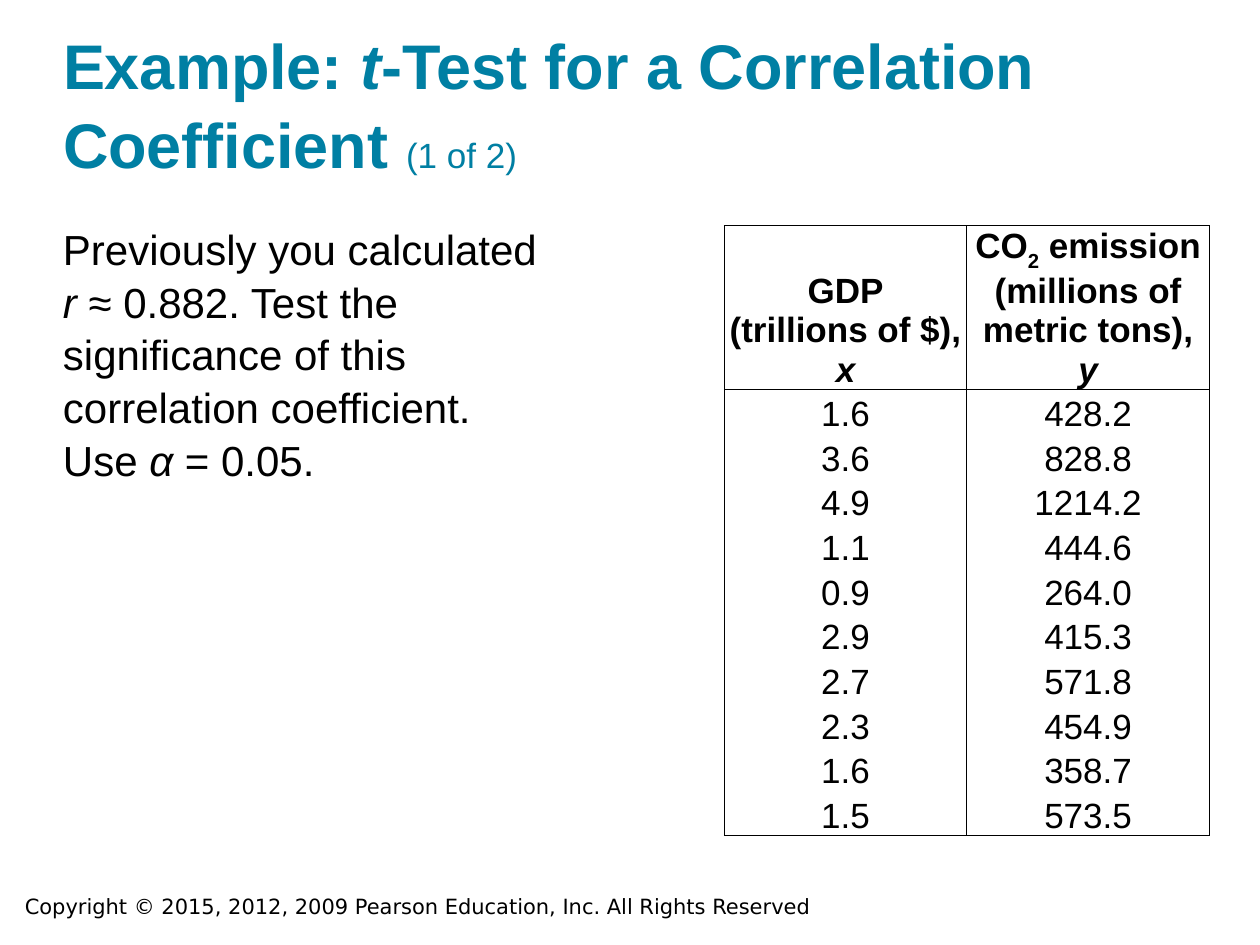
"""Build the slide on a t-test for a correlation coefficient."""
from typing import NamedTuple

from pptx import Presentation
from pptx.dml.color import RGBColor
from pptx.enum.text import MSO_ANCHOR, MSO_AUTO_SIZE, PP_ALIGN
from pptx.oxml import parse_xml
from pptx.oxml.ns import nsdecls
from pptx.util import Cm, Pt

TEAL = RGBColor(0x00, 0x7F, 0xA3)
BLACK = RGBColor(0, 0, 0)
WHITE = RGBColor(0xFF, 0xFF, 0xFF)


class Style(NamedTuple):
    size: float
    color: RGBColor = BLACK
    bold: bool = False
    face: str = "Arial"


class Part(NamedTuple):
    text: str
    slant: bool = False
    sub: bool = False
    style: Style | None = None


class Box(NamedTuple):
    left: float
    top: float
    width: float
    height: float

    def lengths(self) -> list[Cm]:
        return [Cm(side) for side in self]


TITLE = Style(36, TEAL, True)
COUNT = Style(20, TEAL)
BODY = Style(24)
HEAD = Style(20, bold=True)
DATA = Style(20)
NOTE = Style(12, face="DejaVu Sans")

HEADS = [
    [[Part("GDP")], [Part("(trillions of $), "), Part("x", slant=True)]],
    [[Part("CO"), Part("2", sub=True),
      Part(" emission (millions of metric tons), "), Part("y", slant=True)]],
]
PAIRS = [
    ("1.6", "428.2"), ("3.6", "828.8"), ("4.9", "1214.2"), ("1.1", "444.6"),
    ("0.9", "264.0"), ("2.9", "415.3"), ("2.7", "571.8"), ("2.3", "454.9"),
    ("1.6", "358.7"), ("1.5", "573.5"),
]


def write(para, parts: list[Part], base: Style) -> None:
    for part in parts:
        style = part.style or base
        run = para.add_run()
        run.text = part.text
        font = run.font
        font.name, font.size = style.face, Pt(style.size)
        font.bold, font.italic = style.bold, part.slant
        font.color.rgb = style.color
        if part.sub:
            run._r.get_or_add_rPr().set("baseline", "-26000")


def set_frame(frame, inset: float, anchor: MSO_ANCHOR) -> None:
    frame.word_wrap = True
    frame.auto_size = MSO_AUTO_SIZE.NONE
    frame.vertical_anchor = anchor
    frame.margin_left = frame.margin_right = Cm(inset)
    frame.margin_top = frame.margin_bottom = Cm(inset)


def add_text(slide, box: Box, parts: list[Part], style: Style):
    frame = slide.shapes.add_textbox(*box.lengths()).text_frame
    write(frame.paragraphs[0], parts, style)
    return frame


def add_edges(cell, shown: str) -> None:
    props = cell._tc.get_or_add_tcPr()
    for spot, side in enumerate("LRTB"):
        fill = ('<a:solidFill><a:srgbClr val="000000"/></a:solidFill>'
                if side in shown else "<a:noFill/>")
        props.insert(spot, parse_xml(
            f'<a:ln{side} {nsdecls("a")} w="6350">{fill}</a:ln{side}>'))


def fill_cell(cell, lines: list[list[Part]], style: Style, edges: str) -> None:
    cell.margin_left = cell.margin_right = cell.margin_top = Cm(0.03)
    cell.margin_bottom = 0
    cell.vertical_anchor = MSO_ANCHOR.BOTTOM
    frame = cell.text_frame
    for spot, parts in enumerate(lines):
        para = frame.add_paragraph() if spot else frame.paragraphs[0]
        para.alignment = PP_ALIGN.CENTER
        write(para, parts, style)
    add_edges(cell, edges)


def add_data(slide, box: Box) -> None:
    table = slide.shapes.add_table(len(PAIRS) + 1, 2, *box.lengths()).table
    table.first_row = table.horz_banding = False
    for row in table.rows:
        row.height = Cm(0.9)
    table.rows[0].height = Cm(3.1)
    for col, lines in enumerate(HEADS):
        cell = table.cell(0, col)
        cell.fill.solid()
        cell.fill.fore_color.rgb = WHITE
        fill_cell(cell, lines, HEAD, "LRTB")
    for row, pair in enumerate(PAIRS, 1):
        edges = "LR" + "T" * (row == 1) + "B" * (row == len(PAIRS))
        for col, value in enumerate(pair):
            cell = table.cell(row, col)
            cell.fill.background()
            fill_cell(cell, [[Part(value)]], DATA, edges)


def main() -> None:
    deck = Presentation()
    deck.slide_width, deck.slide_height = Cm(25.4), Cm(19.05)
    slide = deck.slides.add_slide(deck.slide_layouts[5])

    title = slide.shapes.title
    title.left, title.top, title.width, title.height = Box(
        1.27, 0.61, 22.86, 3.05).lengths()
    set_frame(title.text_frame, 0, MSO_ANCHOR.BOTTOM)
    head = title.text_frame.paragraphs[0]
    head.alignment = PP_ALIGN.LEFT
    head.line_spacing = 1.05
    write(head, [
        Part("Example: "), Part("t", slant=True),
        Part("-Test for a Correlation Coefficient "),
        Part("(1 of 2)", style=COUNT),
    ], TITLE)

    body = add_text(slide, Box(1.27, 4.45, 9.96, 5.72), [
        Part("Previously you calculated "), Part("r", slant=True),
        Part(" ≈ 0.882. Test the significance of this correlation "
             "coefficient. Use "),
        Part("α", slant=True), Part(" = 0.05."),
    ], BODY)
    set_frame(body, 0, MSO_ANCHOR.TOP)
    body.paragraphs[0].line_spacing = 1.05

    add_data(slide, Box(14.6, 4.55, 9.78, 12.1))

    note = add_text(slide, Box(0.25, 17.88, 19.89, 0.76), [
        Part("Copyright © 2015, 2012, 2009 Pearson Education, Inc. "
             "All Rights Reserved"),
    ], NOTE)
    set_frame(note, 0.25, MSO_ANCHOR.MIDDLE)

    deck.save("out.pptx")


if __name__ == "__main__":
    main()
